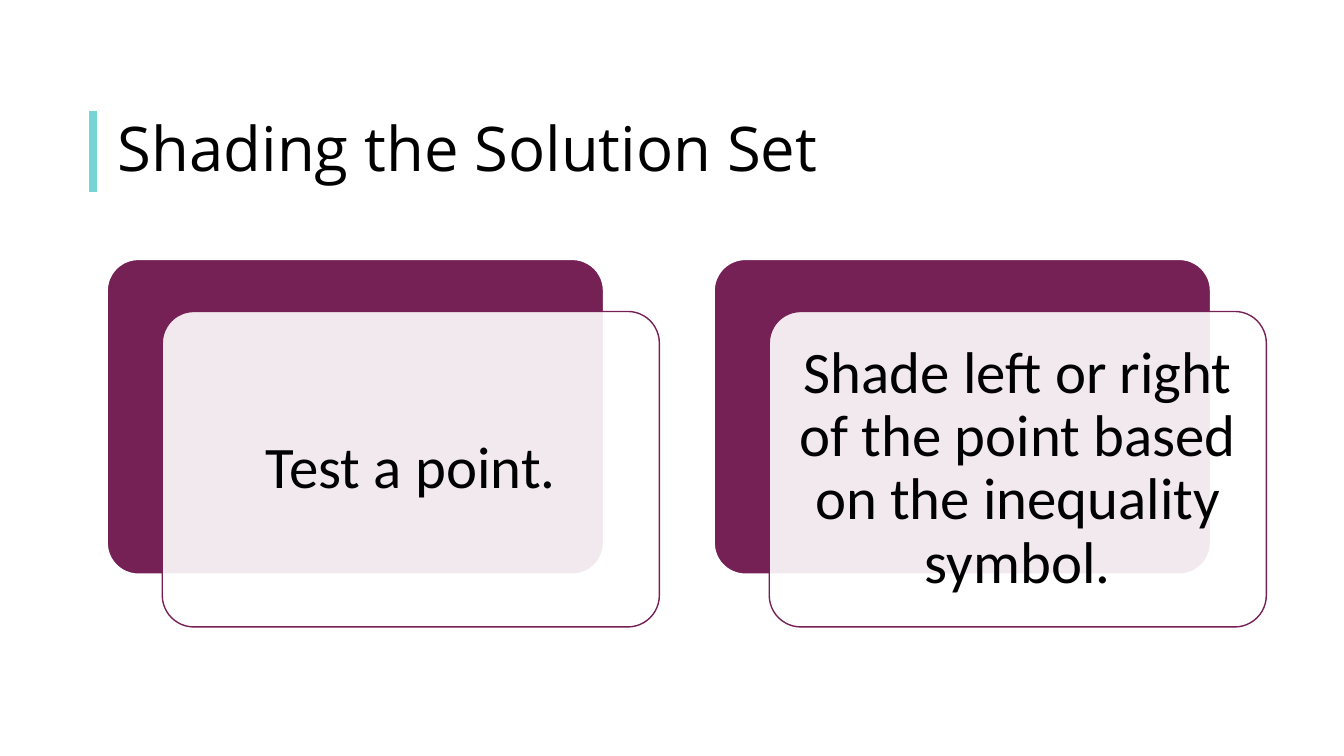
from lxml import etree
from pptx import Presentation
from pptx.dml.color import RGBColor
from pptx.enum import shapes, text
from pptx.oxml import ns
from pptx.util import Inches, Pt

TITLE = "Shading the Solution Set"
STEPS = [
    "Test a point.",
    "Shade left or right of the point based on the inequality symbol.",
]

PLUM = RGBColor(0x75, 0x21, 0x56)
TEAL = RGBColor(0x76, 0xD5, 0xD4)
WHITE = RGBColor(0xFF, 0xFF, 0xFF)
BLACK = RGBColor(0, 0, 0)

TITLE_BOX = (1.07, 1.1, 11.5, 0.8)
BAR_X = 0.92
CARD_LEFT, CARD_TOP = 1.06, 2.57
CARD_W, CARD_H = 4.93, 3.13
CARD_STEP = 6.02
OFFSET_X, OFFSET_Y = 0.55, 0.52
INSET = 0.17


def write(tf, content, font, size, align):
    for name, value in dict(word_wrap=True, auto_size=text.MSO_AUTO_SIZE.NONE,
                            vertical_anchor=text.MSO_ANCHOR.MIDDLE).items():
        setattr(tf, name, value)
    p = tf.paragraphs[0]
    p.alignment, p.line_spacing = align, 0.9
    r = p.add_run()
    r.text = content
    for name, value in dict(name=font, size=Pt(size), bold=False).items():
        setattr(r.font, name, value)
    r.font.color.rgb = BLACK


def add_card(s, left, top, fill, line, width):
    sp = s.shapes.add_shape(shapes.MSO_SHAPE.ROUNDED_RECTANGLE,
                            *map(Inches, (left, top, CARD_W, CARD_H)))
    sp.adjustments[0] = 0.1
    sp.shadow.inherit = False
    sp.fill.solid()
    sp.fill.fore_color.rgb = fill
    sp.line.color.rgb = line
    sp.line.width = Pt(width)
    return sp


def add_step(s, left, content):
    add_card(s, left, CARD_TOP, PLUM, WHITE, 1.5)
    front = add_card(s, left + OFFSET_X, CARD_TOP + OFFSET_Y, WHITE, PLUM, 1)
    color = front.fill._xPr.find(".//" + ns.qn("a:srgbClr"))
    etree.SubElement(color, ns.qn("a:alpha"), val="90000")
    tf = front.text_frame
    for side in ("left", "top", "right", "bottom"):
        setattr(tf, f"margin_{side}", Inches(INSET))
    write(tf, content, "Calibri", 42, text.PP_ALIGN.CENTER)


def main():
    prs = Presentation()
    prs.slide_width, prs.slide_height = Inches(13.33), Inches(7.5)
    s = prs.slides.add_slide(prs.slide_layouts[5])
    s.background.fill.solid()
    s.background.fill.fore_color.rgb = WHITE

    title = s.shapes.title
    left, top, width, height = TITLE_BOX
    for name, value in dict(left=left, top=top, width=width, height=height).items():
        setattr(title, name, Inches(value))
    write(title.text_frame, TITLE, "Open Sans", 44, text.PP_ALIGN.LEFT)

    bar = s.shapes.add_connector(shapes.MSO_CONNECTOR.STRAIGHT,
                                 *map(Inches, (BAR_X, top, BAR_X, top + height)))
    bar.line.color.rgb = TEAL
    bar.line.width = Pt(6)
    etree.SubElement(bar._element.spPr, ns.qn("a:effectLst"))

    for i, step in enumerate(STEPS):
        add_step(s, CARD_LEFT + i * CARD_STEP, step)

    prs.save("out.pptx")


if __name__ == "__main__":
    main()
